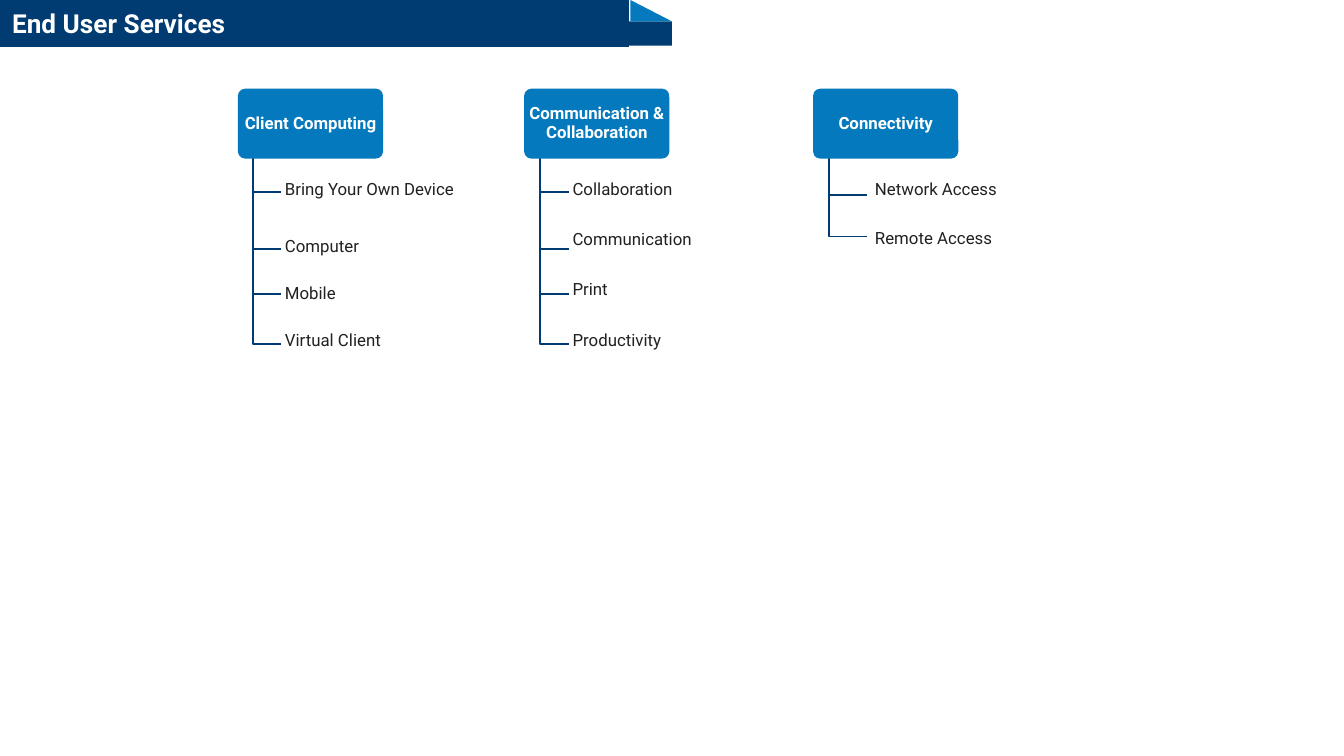
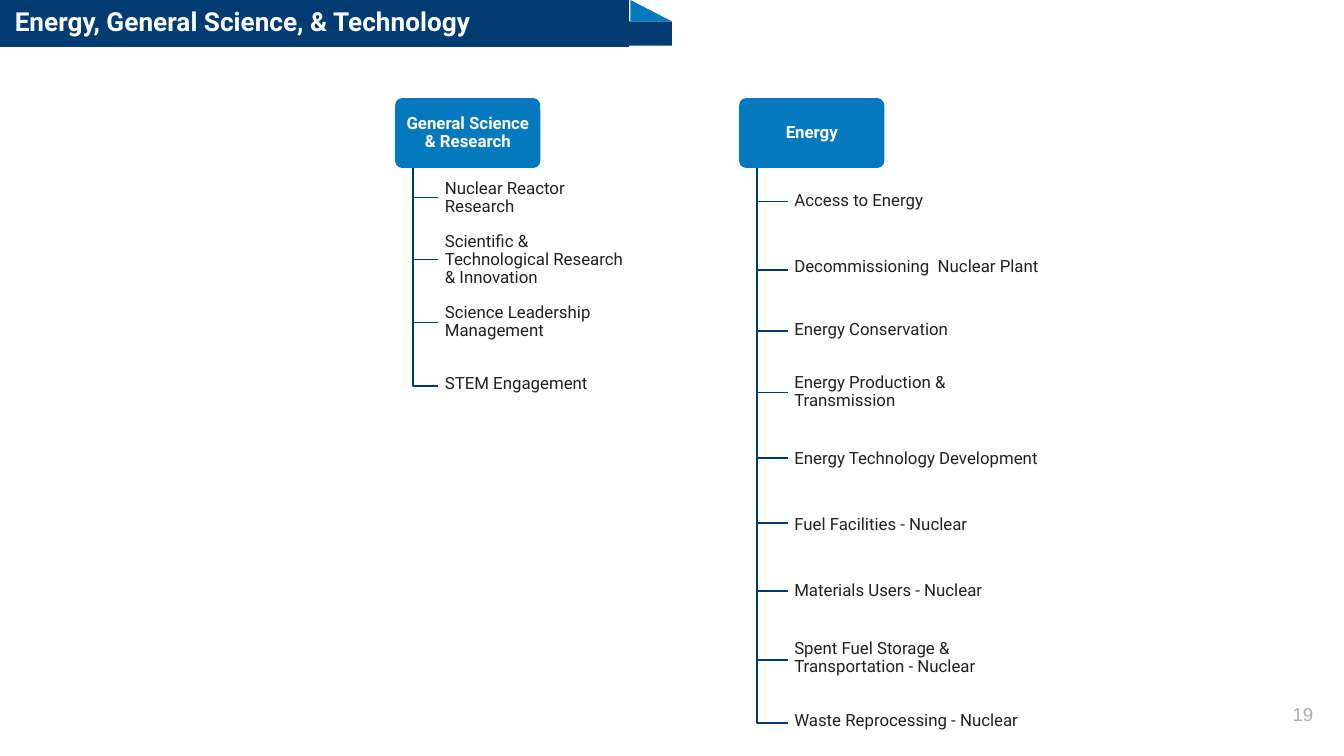
from pptx import Presentation
from pptx import util as u
from pptx.dml.color import RGBColor
from pptx.enum import shapes, text

PX = 9144  # one px is a hundredth of an inch

NAVY, BLUE, WHITE = "003C71", "0579BD", "FFFFFF"
INK, GREY = "212121", "ADADAD"

CARD_W, CARD_H = 108, 52
TIGHT = (2, 1, 2, 1)
ROOMY = (10, 10, 10, 10)

LEFT, CENTER, RIGHT = text.PP_ALIGN.LEFT, text.PP_ALIGN.CENTER, text.PP_ALIGN.RIGHT
TOP, MIDDLE = text.MSO_ANCHOR.TOP, text.MSO_ANCHOR.MIDDLE

TITLE = dict(size=u.Pt(14), bold=True, name="Roboto")
HEAD = dict(size=u.Pt(9), bold=True, name="Roboto")
ITEM = dict(size=u.Pt(9), bold=False, name="Roboto")
NUMBER = dict(size=u.Pt(10), bold=False, name="Arial")


def rgb(value):
    return RGBColor.from_string(value)


def px(*values):
    return [value * PX for value in values]


def set_all(target, values):
    for name, value in values.items():
        setattr(target, name, value)


class Deck:
    """Holds the shared style and the slide being drawn."""

    def __init__(self):
        self.prs = Presentation()
        self.prs.slide_width = u.Inches(10)
        self.prs.slide_height = u.Inches(5.625)
        self.s = None

    def slide(self, title, left, width, spacing=1.0):
        """Start a slide with its title band; the title lies above the band."""
        self.s = self.prs.slides.add_slide(self.prs.slide_layouts[5])
        rect = shapes.MSO_SHAPE.RECTANGLE
        self.shape(rect, 468, 16, 32, 18, NAVY)
        self.shape(rect, -1, 0, 469, 35, NAVY)
        self.shape(shapes.MSO_SHAPE.RIGHT_TRIANGLE, 469, 0, 31, 16, BLUE)
        sp = self.s.shapes.title
        sp.left, sp.top, sp.width, sp.height = px(left, 0, width, 34)
        sp.element.getparent().append(sp.element)
        self.fill_text(sp, title, TITLE, WHITE, margins=ROOMY, spacing=spacing)

    def shape(self, kind, left, top, width, height, fill):
        sp = self.s.shapes.add_shape(kind, *px(left, top, width, height))
        sp.shadow.inherit = False
        sp.fill.solid()
        sp.fill.fore_color.rgb = rgb(fill)
        sp.line.fill.background()
        return sp

    def fill_text(self, sp, words, font, color, align=LEFT, anchor=MIDDLE,
                  margins=TIGHT, spacing=0.9):
        tf = sp.text_frame
        sides = ("margin_left", "margin_top", "margin_right", "margin_bottom")
        set_all(tf, dict(zip(sides, px(*margins))))
        set_all(tf, dict(word_wrap=True, vertical_anchor=anchor,
                         auto_size=text.MSO_AUTO_SIZE.NONE))
        p = tf.paragraphs[0]
        set_all(p, dict(alignment=align, line_spacing=spacing))
        r = p.add_run()
        r.text = words
        set_all(r.font, font)
        r.font.color.rgb = rgb(color)

    def label(self, words, left, top, width, height, font, color, **layout):
        sp = self.s.shapes.add_textbox(*px(left, top, width, height))
        self.fill_text(sp, words, font, color, **layout)

    def card(self, words, left, top):
        sp = self.shape(shapes.MSO_SHAPE.ROUNDED_RECTANGLE,
                        left, top, CARD_W, CARD_H, BLUE)
        sp.adjustments[0] = 0.1
        self.fill_text(sp, words, HEAD, WHITE, align=CENTER)

    def branch(self, x, top, bottom, reach):
        """Draw an elbow down from the card and right towards an item."""
        builder = self.s.shapes.build_freeform(*px(x, top))
        builder.add_line_segments([px(x, bottom), px(x + reach, bottom)], close=False)
        sp = builder.convert_to_shape()
        sp.shadow.inherit = False
        sp.fill.background()
        sp.line.color.rgb = rgb(NAVY)
        sp.line.width = u.Pt(1)

    def column(self, head, left, top, stem, reach, text_left, text_width, items,
               anchor=MIDDLE):
        """Draw a card and its items, each (words, top, height, branch y)."""
        for words, item_top, height, y in items:
            self.branch(stem, top + CARD_H - 1, y, reach)
            self.label(words, text_left, item_top, text_width, height,
                       ITEM, INK, anchor=anchor)
        self.card(head, left, top)

    def page_number(self, number):
        self.label(number, 927, 510, 60, 43, NUMBER, GREY,
                   align=RIGHT, margins=ROOMY, spacing=1.0)


def end_user_services(deck):
    deck.slide("End User Services", -1, 359)
    deck.column("Client Computing", 177, 66, 188, 21, 210, 131, [
        ("Bring Your Own Device", 134, 26, 143),
        ("Computer", 176, 19, 185),
        ("Mobile", 211, 19, 219),
        ("Virtual Client", 246, 19, 256),
    ], anchor=TOP)
    deck.column("Connectivity", 605, 66, 617, 28, 649, 185, [
        ("Network Access", 134, 19, 145),
        ("Remote Access", 170, 23, 176),
    ], anchor=TOP)
    deck.column("Communication & Collaboration", 390, 66, 402, 21, 424, 131, [
        ("Collaboration", 134, 19, 143),
        ("Communication", 171, 19, 185),
        ("Print", 208, 19, 219),
        ("Productivity", 246, 19, 256),
    ], anchor=TOP)


def energy_and_science(deck):
    deck.slide("Energy, General Science, & Technology", 1, 448, spacing=0.9)
    deck.page_number("19")
    deck.column("Energy", 550, 73, 563, 23, 589, 190, [
        ("Access to Energy", 130, 39, 150),
        ("Decommissioning  Nuclear Plant", 181, 36, 201),
        ("Energy Conservation", 229, 33, 246),
        ("Energy Production & Transmission", 275, 34, 292),
        ("Energy Technology Development", 322, 39, 341),
        ("Fuel Facilities - Nuclear", 373, 36, 389),
        ("Materials Users - Nuclear", 421, 37, 440),
        ("Spent Fuel Storage & Transportation - Nuclear", 470, 39, 491),
        ("Waste Reprocessing - Nuclear", 517, 39, 538),
    ])
    research = ("Nuclear Reactor Research",
                "Scientific & Technological Research & Innovation",
                "Science Leadership Management",
                "STEM Engagement")
    deck.column("General Science & Research", 294, 73, 307, 19, 329, 143, [
        (words, 128 + 46 * i, 39, 147 + 140 * i // 3)
        for i, words in enumerate(research)
    ])


def main():
    deck = Deck()
    end_user_services(deck)
    energy_and_science(deck)
    deck.prs.save("out.pptx")


if __name__ == "__main__":
    main()
